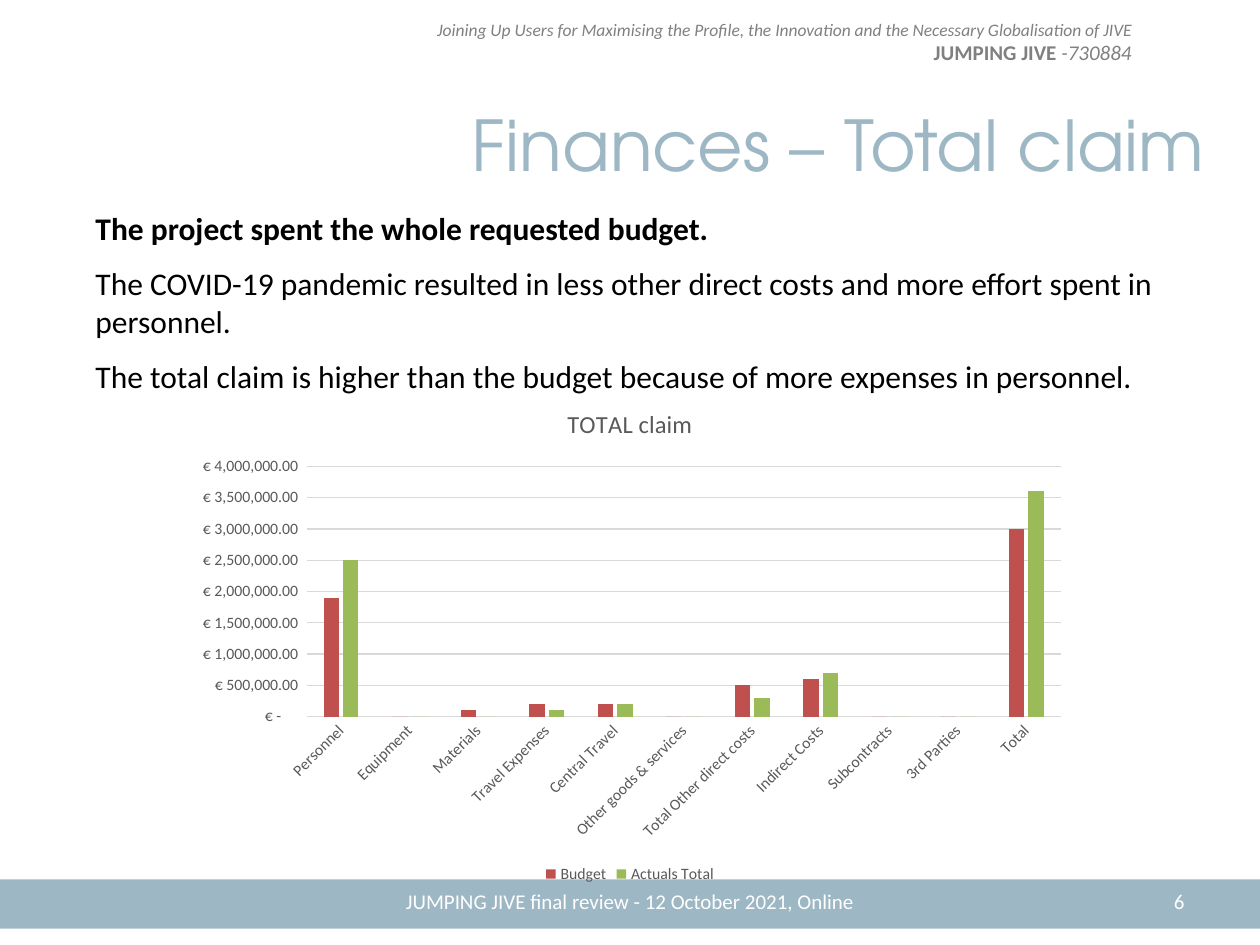
from pptx import Presentation, util as u
from pptx.chart.data import CategoryChartData
from pptx.dml.color import RGBColor
from pptx.enum import chart as ch, shapes, text

COLORS = {
    "band": "9DB7C4", "header": "808080", "body": "000000", "white": "FFFFFF",
    "label": "595959", "grid": "D9D9D9", "budget": "C0504D", "actual": "9BBB59",
}
LEFT, CENTER, RIGHT = text.PP_ALIGN.LEFT, text.PP_ALIGN.CENTER, text.PP_ALIGN.RIGHT
TOP, MIDDLE = text.MSO_ANCHOR.TOP, text.MSO_ANCHOR.MIDDLE


def rgb(name):
    return RGBColor.from_string(COLORS[name])


class Deck:
    """Holds the style and the current slide."""

    font = "Calibri"
    title_font = "TeX Gyre Adventor"

    def __init__(self, width, height):
        self.prs = Presentation()
        self.prs.slide_width, self.prs.slide_height = u.Inches(width), u.Inches(height)
        self.s = self.prs.slides.add_slide(self.prs.slide_layouts[6])

    def style(self, font, size, color, name=None, bold=False, italic=False):
        font.name, font.size = name or self.font, u.Pt(size)
        font.bold, font.italic = bold, italic
        font.color.rgb = rgb(color)

    def band(self, box, color):
        sp = self.s.shapes.add_shape(shapes.MSO_SHAPE.RECTANGLE, *map(u.Inches, box))
        sp.shadow.inherit = False
        sp.fill.solid()
        sp.fill.fore_color.rgb = rgb(color)
        sp.line.fill.background()

    def text(self, box, paragraphs, color, align=LEFT, anchor=TOP, after=0, name=None):
        """Each paragraph is a list of runs: (words, size, marks), marks from 'b' and 'i'."""
        tf = self.s.shapes.add_textbox(*map(u.Inches, box)).text_frame
        tf.word_wrap, tf.vertical_anchor = True, anchor
        for i, runs in enumerate(paragraphs):
            p = tf.add_paragraph() if i else tf.paragraphs[0]
            p.alignment, p.space_after = align, u.Pt(after)
            for words, size, marks in runs:
                r = p.add_run()
                r.text = words
                self.style(r.font, size, color, name, "b" in marks, "i" in marks)

    def columns(self, box, title, categories, series):
        data = CategoryChartData()
        data.categories = categories
        for name, values, _ in series:
            data.add_series(name, values)
        chart = self.s.shapes.add_chart(
            ch.XL_CHART_TYPE.COLUMN_CLUSTERED, *map(u.Inches, box), data).chart
        self.style(chart.font, 10, "body")

        # Title and legend
        chart.has_title = True
        r = chart.chart_title.text_frame.paragraphs[0].add_run()
        r.text = title
        self.style(r.font, 14, "label")
        chart.has_legend = True
        chart.legend.position = ch.XL_LEGEND_POSITION.BOTTOM
        chart.legend.include_in_layout = False
        self.style(chart.legend.font, 9, "label")

        # Bars
        plot = chart.plots[0]
        plot.gap_width, plot.overlap, plot.vary_by_categories = 219, -27, False
        for bars, (_, _, color) in zip(plot.series, series):
            bars.format.fill.solid()
            bars.format.fill.fore_color.rgb = rgb(color)
            bars.invert_if_negative = False

        # Axes
        cat, val = chart.category_axis, chart.value_axis
        for axis in (cat, val):
            axis.major_tick_mark = axis.minor_tick_mark = ch.XL_TICK_MARK.NONE
            self.style(axis.tick_labels.font, 9, "label")
        val.minimum_scale, val.maximum_scale, val.major_unit = 0, 4000000, 500000
        val.format.line.fill.background()
        val.tick_labels.number_format = '_ "€"\\ * #,##0.00_ ;_ "€"\\ * \\-#,##0.00_ ;_ "€"\\ * "-"??_ ;_ @_ '
        val.tick_labels.number_format_is_linked = False
        for line in (cat.format.line, val.major_gridlines.format.line):
            line.color.rgb, line.width = rgb("grid"), u.Pt(0.75)
        cat._element.txPr.bodyPr.set("rot", "-2700000")


def main():
    deck = Deck(10, 7.5)

    # Header and footer band
    deck.band((0, 6.98, 10, 0.39), "band")
    deck.text((3.2, 0.1, 5.88, 0.47), [
        [("Joining Up Users for Maximising the Profile, the Innovation and the "
          "Necessary Globalisation of JIVE", 10, "i")],
        [("JUMPING JIVE ", 12, "b"), ("-730884", 12, "i")],
    ], "header", RIGHT)

    # Title and statements
    deck.text((0.66, 0.67, 9, 0.94), [[("Finances – Total claim", 40, "")]],
              "band", RIGHT, MIDDLE, name=deck.title_font)
    deck.text((0.66, 1.61, 8.83, 1.59), [
        [("The project spent the whole requested budget.", 18, "b")],
        [("The COVID-19 pandemic resulted in less other direct costs and more "
          "effort spent in personnel.", 18, "")],
        [("The total claim is higher than the budget because of more expenses "
          "in personnel.", 18, "")],
    ], "body", after=10)

    # Claim chart
    deck.columns(
        (1.44, 3.06, 7.12, 3.99), "TOTAL claim",
        ["Personnel", "Equipment", "Materials", "Travel Expenses", "Central Travel",
         "Other goods & services", "Total Other direct costs", "Indirect Costs",
         "Subcontracts", "3rd Parties", "Total"],
        [("Budget", [1900000, 0, 100000, 200000, 200000, 0, 500000, 600000,
                     0, 0, 3000000], "budget"),
         ("Actuals Total", [2500000, 0, 0, 100000, 200000, 0, 300000, 700000,
                            0, 0, 3600000], "actual")])

    # Footer text and slide number
    deck.text((2.54, 6.95, 4.92, 0.4),
              [[("JUMPING JIVE final review - 12 October 2021, Online", 12, "")]],
              "white", CENTER, MIDDLE)
    deck.text((7.17, 6.95, 2.33, 0.4), [[("6", 12, "")]], "white", RIGHT, MIDDLE)

    deck.prs.save("out.pptx")


if __name__ == "__main__":
    main()
